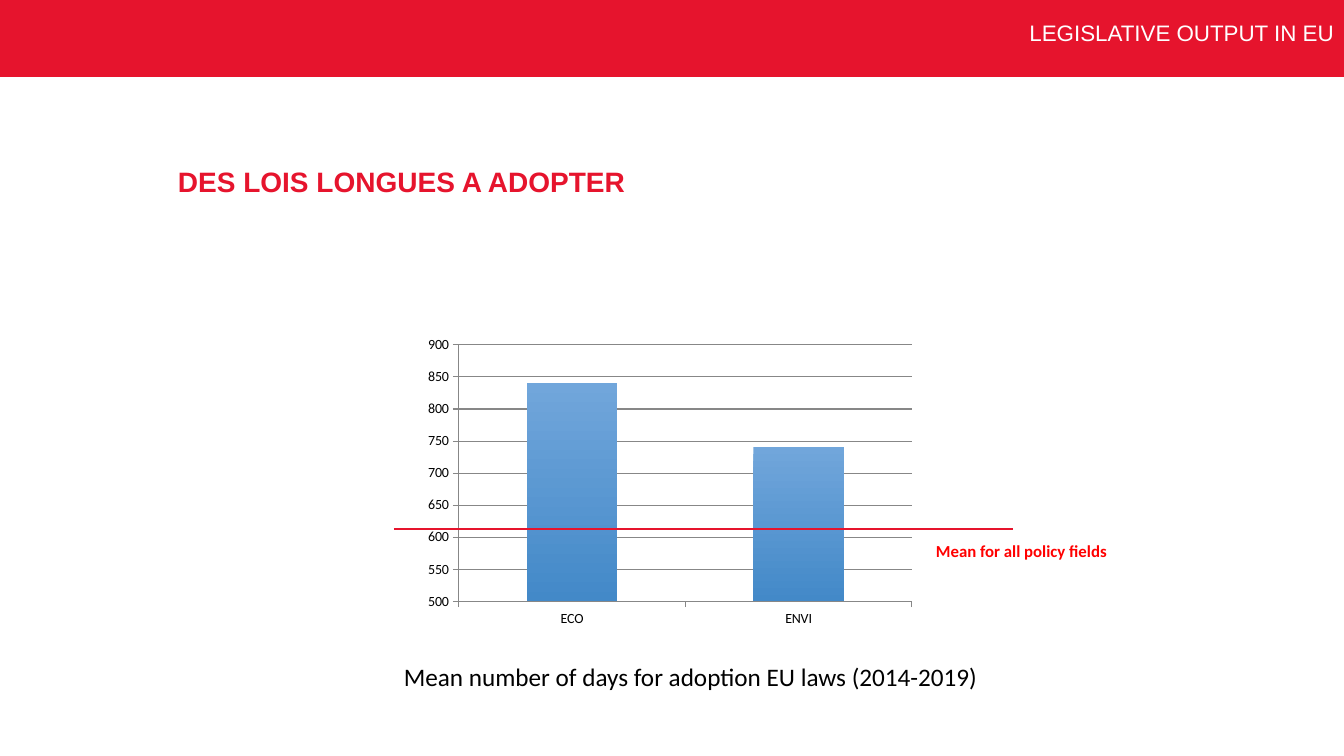
import pptx
import pptx.chart.data
import pptx.dml.color
import pptx.enum.chart
import pptx.enum.shapes
import pptx.enum.text
import pptx.util
from lxml import etree

SCALE = 12192000 / 1344
RED = "E6142D"
BLACK = "000000"
GRAY = "878787"
ALIGN = pptx.enum.text.PP_ALIGN


def px(num):
    """Turn pixels into EMU."""
    return pptx.util.Emu(round(num * SCALE))


def paint(code):
    """Turn a hex string into a colour."""
    return pptx.dml.color.RGBColor.from_string(code)


def style(font, face, size, code, bold=False):
    """Set the face, size, colour and weight of a font."""
    font.name = face
    font.size = pptx.util.Pt(size)
    font.bold = bold
    font.color.rgb = paint(code)


def write(slide, box, text, face, size, code, bold=False, align=ALIGN.LEFT, wrap=True):
    """Place one line of text in a box."""
    frame = slide.shapes.add_textbox(*map(px, box)).text_frame
    frame.word_wrap = wrap
    para = frame.paragraphs[0]
    para.text = text
    para.alignment = align
    style(para.font, face, size, code, bold)


def banner(slide, box):
    """Draw the red band with the topic at its right."""
    left, top, width, height = box
    band = slide.shapes.add_shape(pptx.enum.shapes.MSO_SHAPE.RECTANGLE, *map(px, box))
    band.shadow.inherit = False
    band.fill.solid()
    band.fill.fore_color.rgb = paint(RED)
    band.line.fill.background()
    write(slide, (left + 355, top + 14, width - 355, height - 39),
          "LEGISLATIVE OUTPUT IN EU", "Arial", 16, "FFFFFF", align=ALIGN.RIGHT)


def bars(slide, box):
    """Draw the column chart of adoption times."""
    data = pptx.chart.data.CategoryChartData()
    data.categories = ["ECO", "ENVI"]
    data.add_series("Series 1", [840, 740])
    kind = pptx.enum.chart.XL_CHART_TYPE.COLUMN_CLUSTERED
    chart = slide.shapes.add_chart(kind, *map(px, box), data).chart
    chart.has_legend = False
    chart.has_title = False
    style(chart.font, "Calibri", 10, BLACK)
    scale = chart.value_axis
    scale.minimum_scale = 500
    scale.maximum_scale = 900
    scale.major_unit = 50
    scale.has_major_gridlines = True
    for part in (scale, chart.category_axis, scale.major_gridlines):
        part.format.line.color.rgb = paint(GRAY)
        part.format.line.width = pptx.util.Pt(0.75)
    for axis in (scale, chart.category_axis):
        axis.major_tick_mark = pptx.enum.chart.XL_TICK_MARK.OUTSIDE
    plot = chart.plots[0]
    plot.gap_width = 150
    plot.vary_by_categories = False
    fill = plot.series[0].format.fill
    fill.gradient()
    fill.gradient_angle = 270
    for stop, code in zip(fill.gradient_stops, ("71A6DB", "4389C8")):
        stop.color.rgb = paint(code)


def mean(slide, box):
    """Draw the mean line with its label below the right end."""
    left, top, width, height = box
    kind = pptx.enum.shapes.MSO_CONNECTOR.STRAIGHT
    line = slide.shapes.add_connector(kind, px(left), px(top), px(left + width), px(top))
    line.line.color.rgb = paint(RED)
    line.line.width = pptx.util.Pt(1)
    etree.SubElement(line.line._get_or_add_ln().getparent(),
                     pptx.oxml.ns.qn("a:effectLst"))
    write(slide, (left + 532, top + 7, 238, height),
          "Mean for all policy fields", "Calibri", 12, "FF0000", True)


def figure(slide, box):
    """Place the chart, its caption and the mean line."""
    left, top, width, height = box
    bars(slide, (left + 24, top, 504, 302))
    write(slide, (left, top + 325, width, 40),
          "Mean number of days for adoption EU laws (2014-2019)",
          "Calibri", 18, BLACK, wrap=False)
    mean(slide, (left, top + 198, 619, 30))


def main():
    """Build the slide and save it."""
    deck = pptx.Presentation()
    deck.slide_width = px(1344)
    deck.slide_height = px(756)
    slide = deck.slides.add_slide(deck.slide_layouts[6])
    banner(slide, (0, 0, 1344, 77))
    write(slide, (168, 160, 1020, 40), "DES LOIS LONGUES A ADOPTER",
          "Arial", 20, RED, True)
    figure(slide, (394, 331, 601, 365))
    deck.save("out.pptx")


if __name__ == "__main__":
    main()
